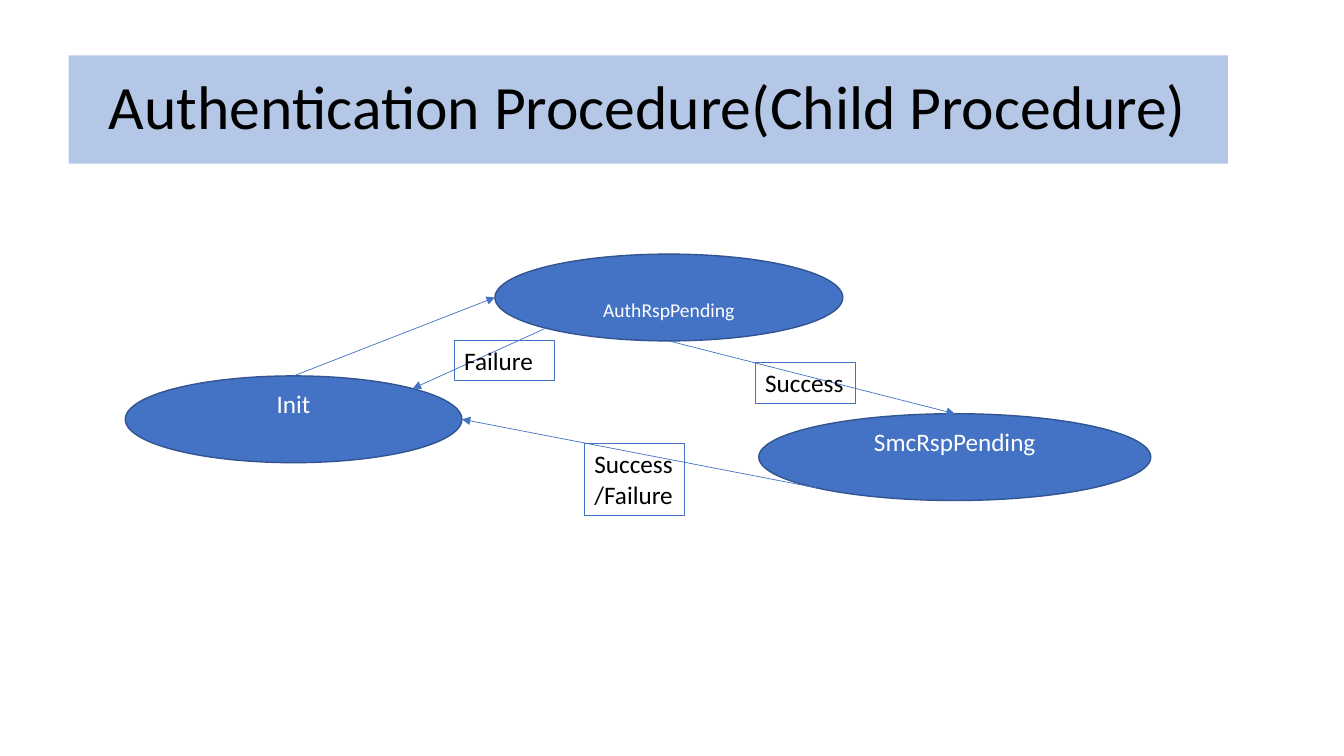
from dataclasses import dataclass
from math import cos, radians, sin

from pptx import Presentation
from pptx.dml.color import RGBColor
from pptx.enum.shapes import MSO_CONNECTOR, MSO_SHAPE
from pptx.enum.text import MSO_ANCHOR, MSO_AUTO_SIZE, PP_ALIGN
from pptx.oxml.ns import qn
from pptx.util import Pt
from lxml.etree import SubElement


@dataclass(frozen=True)
class Theme:
    font: str = "Calibri"
    title_size: int = 44
    body_size: int = 18
    small_size: int = 14
    dark: RGBColor = RGBColor(0, 0, 0)
    light: RGBColor = RGBColor(255, 255, 255)
    banner: RGBColor = RGBColor(0xB4, 0xC7, 0xE7)
    accent: RGBColor = RGBColor(0x44, 0x72, 0xC4)
    outline: RGBColor = RGBColor(0x32, 0x54, 0x91)


THEME = Theme()
STATE_HEIGHT = 62
LABEL_WIDTH = 71.5
INSET = 3.6
TOP, RIGHT, BOTTOM, LEFT = 90, 0, 270, 180
TOP_RIGHT, BOTTOM_LEFT = 45, 225


def write(tf, text, size, color, align):
    tf.word_wrap = True
    p = tf.paragraphs[0]
    p.text = text
    p.alignment = align
    p.font.name = THEME.font
    p.font.size = Pt(size)
    p.font.color.rgb = color
    return p


def set_title(s, text):
    title = s.shapes.title
    title.left, title.top, title.width, title.height = (
        Pt(v) for v in (49, 39.5, 828, 77.5))
    title.fill.solid()
    title.fill.fore_color.rgb = THEME.banner
    tf = title.text_frame
    tf.vertical_anchor = MSO_ANCHOR.MIDDLE
    p = write(tf, text, THEME.title_size, THEME.dark, PP_ALIGN.CENTER)
    p.line_spacing = 0.9


def add_state(s, name, left, top, width, size=THEME.body_size, above=0, below=0):
    """Draw a state ellipse; above and below are extra space around its name."""
    sp = s.shapes.add_shape(
        MSO_SHAPE.OVAL, Pt(left), Pt(top), Pt(width), Pt(STATE_HEIGHT))
    sp.shadow.inherit = False
    sp.fill.solid()
    sp.fill.fore_color.rgb = THEME.accent
    sp.line.color.rgb = THEME.outline
    sp.line.width = Pt(1)
    tf = sp.text_frame
    tf.vertical_anchor = MSO_ANCHOR.MIDDLE
    tf.margin_top, tf.margin_bottom = Pt(INSET + above), Pt(INSET + below)
    write(tf, name, size, THEME.light, PP_ALIGN.CENTER)
    return sp


def rim_point(sp, angle):
    """Return the point on an ellipse at an angle, counterclockwise from the right."""
    a = radians(angle)
    return (int(sp.left + sp.width / 2 * (1 + cos(a))),
            int(sp.top + sp.height / 2 * (1 - sin(a))))


def add_transition(s, source, source_angle, target, target_angle):
    arrow = s.shapes.add_connector(
        MSO_CONNECTOR.STRAIGHT,
        *rim_point(source, source_angle), *rim_point(target, target_angle))
    arrow.line.color.rgb = THEME.accent
    arrow.line.width = Pt(0.5)
    SubElement(arrow.line._get_or_add_ln(), qn("a:tailEnd"), type="triangle")
    SubElement(arrow._element.spPr, qn("a:effectLst"))


def add_label(s, text, left, top, height=29):
    box = s.shapes.add_textbox(Pt(left), Pt(top), Pt(LABEL_WIDTH), Pt(height))
    box.line.color.rgb = THEME.accent
    box.line.width = Pt(0.75)
    box.text_frame.auto_size = MSO_AUTO_SIZE.SHAPE_TO_FIT_TEXT
    write(box.text_frame, text, THEME.body_size, THEME.dark, PP_ALIGN.LEFT)


def main():
    prs = Presentation()
    prs.slide_width, prs.slide_height = Pt(960), Pt(540)
    s = prs.slides.add_slide(prs.slide_layouts[5])
    set_title(s, "Authentication Procedure(Child Procedure)")

    init = add_state(s, "Init", 89.5, 268.5, 240.5, below=22)
    smc = add_state(s, "SmcRspPending", 542, 295.5, 280, below=22)
    auth = add_state(s, "AuthRspPending", 353.5, 181.5, 248.5,
                     THEME.small_size, above=17)

    add_transition(s, smc, BOTTOM_LEFT, init, RIGHT)
    add_transition(s, auth, BOTTOM, smc, TOP)
    add_transition(s, init, TOP, auth, LEFT)
    add_transition(s, auth, BOTTOM_LEFT, init, TOP_RIGHT)

    add_label(s, "Failure", 324.5, 243)
    add_label(s, "Success", 539.5, 259)
    add_label(s, "Success/Failure", 417.5, 317, height=51)
    prs.save("out.pptx")


if __name__ == "__main__":
    main()
